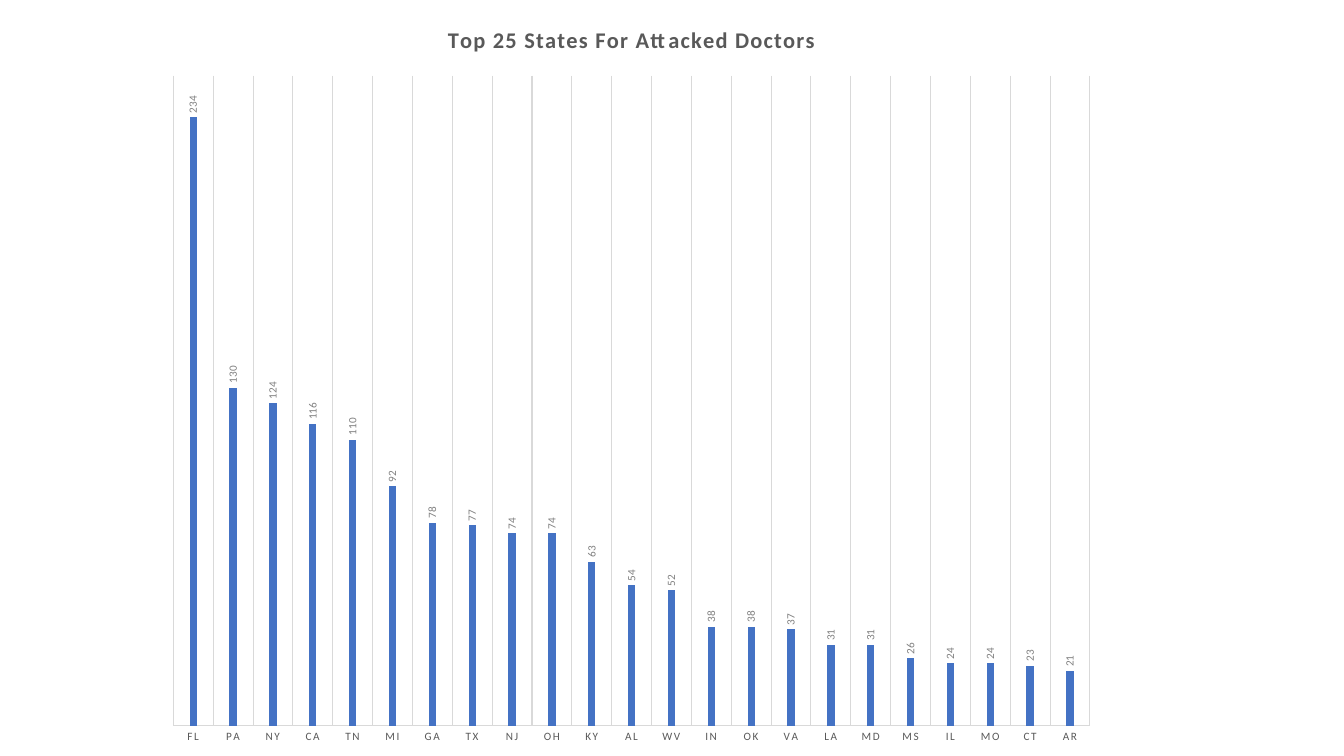
"""Build a slide with a column chart of attacked doctors by state."""
from typing import NamedTuple

import pptx
import pptx.chart.data
import pptx.dml.color
import pptx.enum.chart
import pptx.oxml
import pptx.oxml.ns
import pptx.util

Inches, Pt = pptx.util.Inches, pptx.util.Pt
RGBColor = pptx.dml.color.RGBColor

BLUE = RGBColor(0x44, 0x72, 0xC4)
DARK_GRAY = RGBColor(0x59, 0x59, 0x59)
MID_GRAY = RGBColor(0x80, 0x80, 0x80)
LIGHT_GRAY = RGBColor(0xD9, 0xD9, 0xD9)
FONT = "Calibri"


class State(NamedTuple):
    code: str
    doctors: int


STATES = [
    State("FL", 234), State("PA", 130), State("NY", 124), State("CA", 116),
    State("TN", 110), State("MI", 92), State("GA", 78), State("TX", 77),
    State("NJ", 74), State("OH", 74), State("KY", 63), State("AL", 54),
    State("WV", 52), State("IN", 38), State("OK", 38), State("VA", 37),
    State("LA", 31), State("MD", 31), State("MS", 26), State("IL", 24),
    State("MO", 24), State("CT", 23), State("AR", 21),
]


def style_font(font, size: float, color: RGBColor, bold: bool = False) -> None:
    font.name, font.size, font.bold = FONT, Pt(size), bold
    font.color.rgb = color


def style_line(line) -> None:
    line.color.rgb = LIGHT_GRAY
    line.width = Pt(0.75)


def set_attribute(chart, query: str, name: str, value: str) -> None:
    for element in chart.element.xpath(query):
        element.set(name, value)


def place_plot(chart, x: float, y: float, w: float, h: float) -> None:
    plot_area = chart.element.xpath("//c:plotArea")[0]
    for layout in plot_area.xpath("./c:layout"):
        plot_area.remove(layout)
    fields = {"layoutTarget": "inner", "xMode": "edge", "yMode": "edge",
              "x": x, "y": y, "w": w, "h": h}
    body = "".join(f'<c:{tag} val="{val}"/>' for tag, val in fields.items())
    plot_area.insert(0, pptx.oxml.parse_xml(
        f'<c:layout {pptx.oxml.ns.nsdecls("c")}>'
        f"<c:manualLayout>{body}</c:manualLayout></c:layout>"))


def add_title(chart, text: str) -> None:
    p = chart.chart_title.text_frame.paragraphs[0]
    r = p.add_run()
    r.text = text
    style_font(r.font, 16, DARK_GRAY, bold=True)
    chart.chart_title.include_in_layout = False
    set_attribute(chart, "//c:title//a:rPr", "spc", "100")


def style_axes(chart) -> None:
    cat, val = chart.category_axis, chart.value_axis
    cat.major_tick_mark = pptx.enum.chart.XL_TICK_MARK.NONE
    cat.has_major_gridlines = True
    style_line(cat.format.line)
    style_line(cat.major_gridlines.format.line)
    style_font(cat.tick_labels.font, 8, DARK_GRAY)
    set_attribute(chart, "//c:catAx/c:txPr//a:defRPr", "spc", "100")
    val.minimum_scale, val.maximum_scale = 0, 250
    val.has_major_gridlines = False
    val.visible = False


def style_columns(chart) -> None:
    plot = chart.plots[0]
    plot.gap_width, plot.overlap = 444, -90
    plot.vary_by_categories = False
    series = plot.series[0]
    series.format.fill.solid()
    series.format.fill.fore_color.rgb = BLUE
    labels = series.data_labels
    labels.show_value = True
    labels.position = pptx.enum.chart.XL_LABEL_POSITION.OUTSIDE_END
    style_font(labels.font, 8, MID_GRAY)
    set_attribute(chart, "//c:dLbls/c:txPr/a:bodyPr", "rot", "-5400000")
    set_attribute(chart, "//c:dLbls/c:txPr/a:bodyPr", "vert", "horz")


def add_state_chart(s) -> None:
    data = pptx.chart.data.CategoryChartData()
    data.categories = [state.code for state in STATES]
    data.add_series("Series 1", [state.doctors for state in STATES])
    chart = s.shapes.add_chart(
        pptx.enum.chart.XL_CHART_TYPE.COLUMN_CLUSTERED,
        Inches(1.53), Inches(0), Inches(9.47), Inches(7.5), data).chart
    chart.font.name, chart.font.size = FONT, Pt(10)
    chart.has_legend = False
    add_title(chart, "Top 25 States For Attacked Doctors")
    style_axes(chart)
    style_columns(chart)
    place_plot(chart, 0.02, 0.1, 0.96, 0.86)


def main() -> None:
    prs = pptx.Presentation()
    prs.slide_width, prs.slide_height = Inches(13.33), Inches(7.5)
    s = prs.slides.add_slide(prs.slide_layouts[6])
    add_state_chart(s)
    prs.save("out.pptx")


if __name__ == "__main__":
    main()
